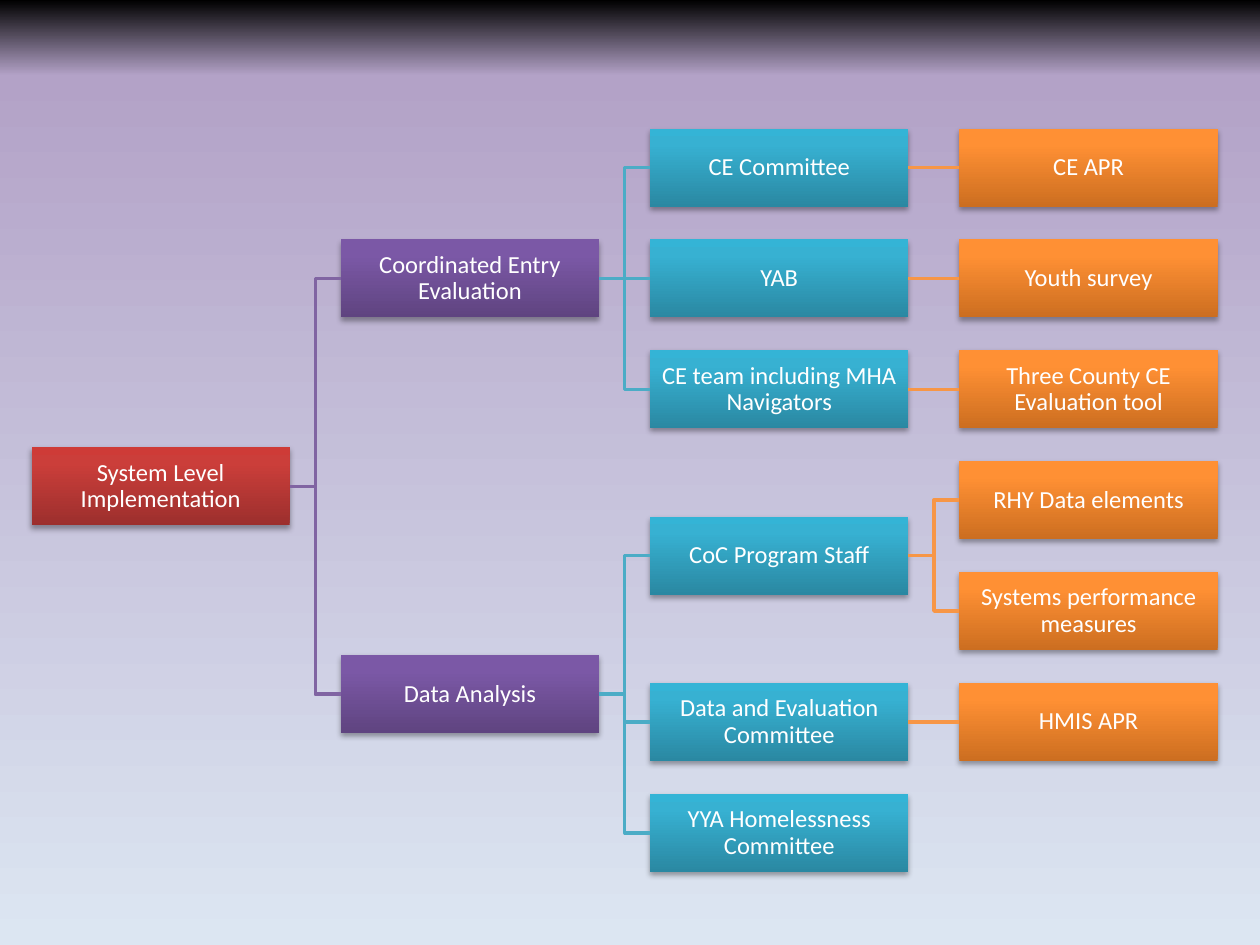
import pptx
import pptx.util
import pptx.dml.color
import pptx.enum.shapes
import pptx.enum.text
import pptx.oxml.ns
import lxml.etree

Inches, Pt = pptx.util.Inches, pptx.util.Pt
RGBColor = pptx.dml.color.RGBColor
qn = pptx.oxml.ns.qn
MSO_CONNECTOR = pptx.enum.shapes.MSO_CONNECTOR

BLACK = RGBColor(0x00, 0x00, 0x00)
WHITE = RGBColor(0xFF, 0xFF, 0xFF)
LILAC = RGBColor(0xB3, 0xA2, 0xC7)
PALE_BLUE = RGBColor(0xDC, 0xE6, 0xF2)
PURPLE_LINE = RGBColor(0x80, 0x64, 0xA2)
TEAL_LINE = RGBColor(0x4B, 0xAC, 0xC6)
ORANGE_LINE = RGBColor(0xF7, 0x96, 0x46)
RED = (RGBColor(0x9C, 0x2F, 0x2D), RGBColor(0xCB, 0x3E, 0x3A), RGBColor(0xCE, 0x3B, 0x37))
PURPLE = (RGBColor(0x5F, 0x44, 0x80), RGBColor(0x7B, 0x58, 0xA6), RGBColor(0x7C, 0x57, 0xA8))
TEAL = (RGBColor(0x2A, 0x88, 0xA2), RGBColor(0x37, 0xB1, 0xD2), RGBColor(0x34, 0xB4, 0xD6))
ORANGE = (RGBColor(0xCC, 0x6E, 0x20), RGBColor(0xFF, 0x90, 0x34), RGBColor(0xFF, 0x91, 0x36))

LEVEL_FILLS = [RED, PURPLE, TEAL, ORANGE]
LEVEL_LINES = [None, PURPLE_LINE, TEAL_LINE, ORANGE_LINE]
LEFT, COLUMN_STEP = 0.25, 2.455
TOP, ROW_STEP = 1.02, 0.88
BOX_W, BOX_H = 2.05, 0.62

# Text, level, row (in steps from the top) and parent
NODES = [
    ("System Level Implementation", 0, 2.875, None),
    ("Coordinated Entry Evaluation", 1, 1, "System Level Implementation"),
    ("Data Analysis", 1, 4.75, "System Level Implementation"),
    ("CE Committee", 2, 0, "Coordinated Entry Evaluation"),
    ("YAB", 2, 1, "Coordinated Entry Evaluation"),
    ("CE team including MHA Navigators", 2, 2, "Coordinated Entry Evaluation"),
    ("CoC Program Staff", 2, 3.5, "Data Analysis"),
    ("Data and Evaluation Committee", 2, 5, "Data Analysis"),
    ("YYA Homelessness Committee", 2, 6, "Data Analysis"),
    ("CE APR", 3, 0, "CE Committee"),
    ("Youth survey", 3, 1, "YAB"),
    ("Three County CE Evaluation tool", 3, 2, "CE team including MHA Navigators"),
    ("RHY Data elements", 3, 3, "CoC Program Staff"),
    ("Systems performance measures", 3, 4, "CoC Program Staff"),
    ("HMIS APR", 3, 5, "Data and Evaluation Committee"),
]


def set_gradient(fill, element, positions, colors, angle):
    """Fill with a linear gradient; positions are percentages, angle is counter-clockwise."""
    fill.gradient()
    fill.gradient_angle = angle
    stops = element.find(".//" + qn("a:gsLst"))
    for stop in list(stops):
        stops.remove(stop)
    for position, color in zip(positions, colors):
        stop = lxml.etree.SubElement(stops, qn("a:gs"), pos=str(position * 1000))
        lxml.etree.SubElement(stop, qn("a:srgbClr"), val=str(color))


def add_soft_shadow(sp):
    sp.shadow.inherit = False
    effects = sp.element.spPr.find(qn("a:effectLst"))
    shadow = lxml.etree.SubElement(effects, qn("a:outerShdw"), blurRad="40000",
                                   dist="23000", dir="5400000", rotWithShape="0")
    color = lxml.etree.SubElement(shadow, qn("a:srgbClr"), val=str(BLACK))
    lxml.etree.SubElement(color, qn("a:alpha"), val="35000")


prs = pptx.Presentation()
prs.slide_width, prs.slide_height = Inches(10), Inches(7.5)
s = prs.slides.add_slide(prs.slide_layouts[6])
set_gradient(s.background.fill, s.element, (0, 8, 100), (BLACK, LILAC, PALE_BLUE), 270)

boxes = {}
for text, level, row, parent in NODES:
    sp = s.shapes.add_shape(
        pptx.enum.shapes.MSO_SHAPE.RECTANGLE,
        Inches(LEFT + level * COLUMN_STEP), Inches(TOP + row * ROW_STEP),
        Inches(BOX_W), Inches(BOX_H))
    boxes[text] = sp
    set_gradient(sp.fill, sp.element, (0, 80, 100), LEVEL_FILLS[level], 90)
    sp.line.fill.background()
    add_soft_shadow(sp)

    tf = sp.text_frame
    tf.word_wrap = True
    tf.vertical_anchor = pptx.enum.text.MSO_ANCHOR.MIDDLE
    tf.margin_left = tf.margin_right = tf.margin_top = tf.margin_bottom = Inches(0.01)
    p = tf.paragraphs[0]
    p.text = text
    p.alignment = pptx.enum.text.PP_ALIGN.CENTER
    p.line_spacing = 0.9
    p.font.name = "Calibri"
    p.font.size = Pt(14)
    p.font.color.rgb = WHITE

    if parent:
        start = boxes[parent]
        kind = MSO_CONNECTOR.STRAIGHT if start.top == sp.top else MSO_CONNECTOR.ELBOW
        link = s.shapes.add_connector(kind, 0, 0, 0, 0)
        link.begin_connect(start, 3)
        link.end_connect(sp, 1)
        link.line.color.rgb = LEVEL_LINES[level]
        link.line.width = Pt(2)
        lxml.etree.SubElement(link.element.spPr, qn("a:effectLst"))

prs.save("out.pptx")
